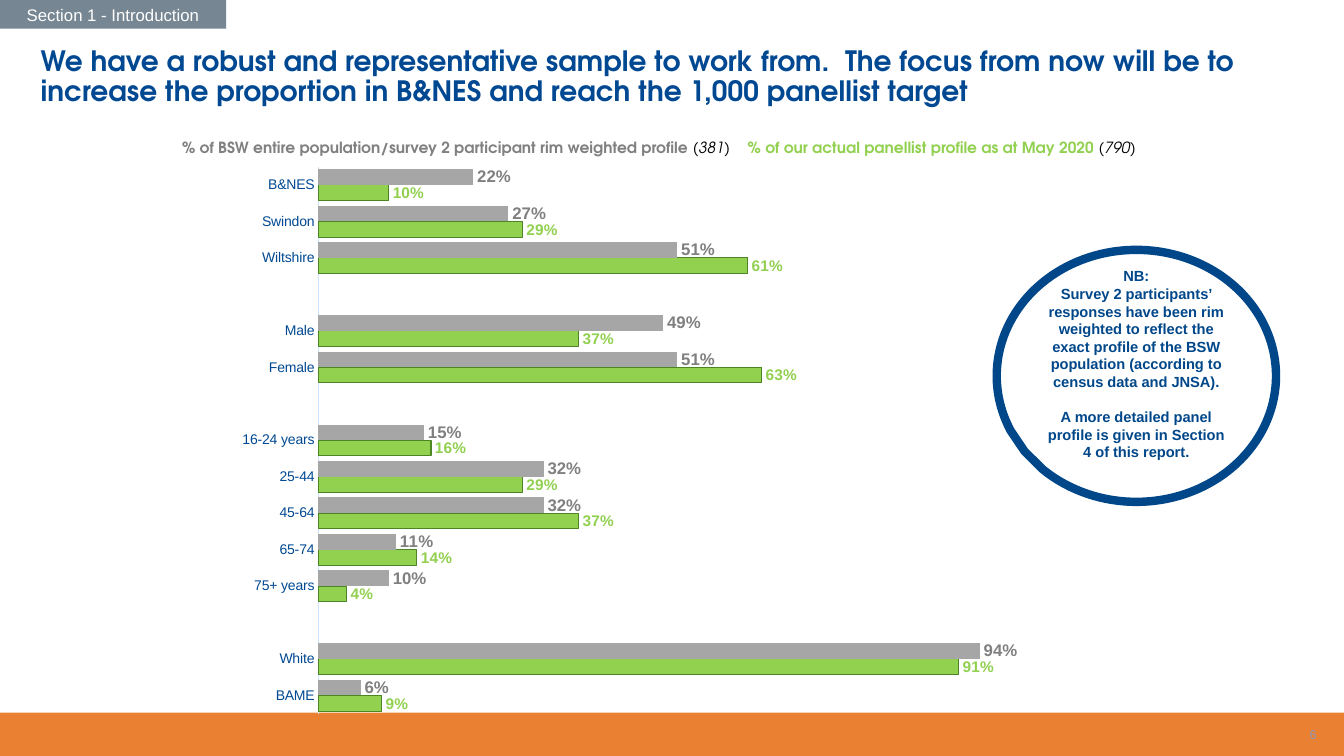
from dataclasses import dataclass

from lxml import etree
from pptx import Presentation
from pptx.chart.data import CategoryChartData
from pptx.dml.color import RGBColor
from pptx.enum.chart import XL_CHART_TYPE as ChartType
from pptx.enum.chart import XL_LABEL_POSITION as LabelPosition
from pptx.enum.chart import XL_TICK_MARK as TickMark
from pptx.enum.shapes import MSO_SHAPE as Shape
from pptx.enum.text import MSO_ANCHOR as Anchor
from pptx.enum.text import MSO_AUTO_SIZE as AutoSize
from pptx.enum.text import PP_ALIGN as Align
from pptx.oxml.ns import qn
from pptx.util import Pt


@dataclass(frozen=True)
class Theme:
    heading_font: str = "TeX Gyre Adventor"
    body_font: str = "Arial"
    navy: str = "004992"
    callout: str = "00478A"
    orange: str = "EA8132"
    slate: str = "768692"
    page_number: str = "8C95B6"
    green: str = "92D050"
    green_line: str = "4C8523"
    grey_bar: str = "A6A6A6"
    grey_text: str = "808080"
    axis: str = "C8E4FF"
    white: str = "FFFFFF"
    black: str = "000000"
    title_size: float = 20
    section_size: float = 12
    key_size: float = 11
    callout_size: float = 10.5
    axis_size: float = 10
    panel_label_size: float = 11
    population_label_size: float = 12
    page_size: float = 9


THEME = Theme()

# Top to bottom: category, population share, panel share; None is a gap between groups.
PROFILE = [
    ("B&NES", 0.22, 0.10),
    ("Swindon", 0.27, 0.29),
    ("Wiltshire", 0.51, 0.61),
    ("", None, None),
    ("Male", 0.49, 0.37),
    ("Female", 0.51, 0.63),
    ("", None, None),
    ("16-24 years", 0.15, 0.16),
    ("25-44", 0.32, 0.29),
    ("45-64", 0.32, 0.37),
    ("65-74", 0.11, 0.14),
    ("75+ years", 0.10, 0.04),
    ("", None, None),
    ("White", 0.94, 0.91),
    ("BAME", 0.06, 0.09),
]


def style_font(font, size, color, name=THEME.body_font, bold=False, italic=False):
    font.name, font.size, font.bold, font.italic = name, Pt(size), bold, italic
    font.color.rgb = RGBColor.from_string(color)


def set_margins(text_frame, left, top, right, bottom):
    text_frame.margin_left, text_frame.margin_top = Pt(left), Pt(top)
    text_frame.margin_right, text_frame.margin_bottom = Pt(right), Pt(bottom)


def add_block(slide, box, color, text=""):
    block = slide.shapes.add_shape(Shape.RECTANGLE, *map(Pt, box))
    block.shadow.inherit = False
    block.fill.solid()
    block.fill.fore_color.rgb = RGBColor.from_string(color)
    block.line.fill.background()
    if text:
        block.text_frame.text = text
        block.text_frame.vertical_anchor = Anchor.MIDDLE
        paragraph = block.text_frame.paragraphs[0]
        paragraph.alignment = Align.CENTER
        style_font(paragraph.runs[0].font, THEME.section_size, THEME.white)


def add_page_number(slide, box, number):
    text_frame = slide.shapes.add_textbox(*map(Pt, box)).text_frame
    text_frame.word_wrap = True
    text_frame.vertical_anchor = Anchor.MIDDLE
    text_frame.text = number
    paragraph = text_frame.paragraphs[0]
    paragraph.alignment = Align.RIGHT
    style_font(paragraph.runs[0].font, THEME.page_size, THEME.page_number)


def set_title(slide, box, text):
    title = slide.shapes.title
    title.left, title.top, title.width, title.height = map(Pt, box)
    text_frame = title.text_frame
    text_frame.text = text
    text_frame.auto_size = AutoSize.NONE
    text_frame.word_wrap = True
    text_frame.vertical_anchor = Anchor.TOP
    set_margins(text_frame, 17, 3.6, 17, 3.6)
    paragraph = text_frame.paragraphs[0]
    paragraph.alignment = Align.LEFT
    paragraph.line_spacing = 0.9
    style_font(paragraph.runs[0].font, THEME.title_size, THEME.navy, THEME.heading_font, bold=True)


def add_chart_key(slide, box, tab_position, entries):
    """Write the series names and sample sizes on one line, parted by a tab stop."""
    text_frame = slide.shapes.add_textbox(*map(Pt, box)).text_frame
    text_frame.word_wrap = True
    paragraph = text_frame.paragraphs[0]
    tabs = etree.SubElement(paragraph._p.get_or_add_pPr(), qn("a:tabLst"))
    etree.SubElement(tabs, qn("a:tab"), pos=str(Pt(tab_position)), algn="l")
    for index, (name, sample, color) in enumerate(entries):
        label = paragraph.add_run()
        label.text = ("\t" if index else "") + name + " "
        style_font(label.font, THEME.key_size, color, THEME.heading_font, bold=True)
        base = paragraph.add_run()
        base.text = sample
        style_font(base.font, THEME.key_size, THEME.black, THEME.heading_font, italic=True)


def style_series(series, fill, label_color, label_size):
    series.format.fill.solid()
    series.format.fill.fore_color.rgb = RGBColor.from_string(fill)
    series.invert_if_negative = False
    labels = series.data_labels
    labels.show_value = True
    labels.number_format, labels.number_format_is_linked = "0%", False
    labels.position = LabelPosition.OUTSIDE_END
    style_font(labels.font, label_size, label_color, bold=True)


def set_plot_area(chart, **fractions):
    """Fix the inner plot area as fractions of the chart frame."""
    plot_area = chart._chartSpace.chart.plotArea
    for old in plot_area.findall(qn("c:layout")):
        plot_area.remove(old)
    layout = etree.Element(qn("c:layout"))
    plot_area.insert(0, layout)
    manual = etree.SubElement(layout, qn("c:manualLayout"))
    settings = {"layoutTarget": "inner", "xMode": "edge", "yMode": "edge", **fractions}
    for tag, value in settings.items():
        etree.SubElement(manual, qn(f"c:{tag}"), val=str(value))


def add_profile_chart(slide, box):
    categories, population, panel = zip(*reversed(PROFILE))
    data = CategoryChartData(number_format="0%")
    data.categories = categories
    data.add_series("Series 1", panel)
    data.add_series("Series 2", population)
    chart = slide.shapes.add_chart(ChartType.BAR_CLUSTERED, *map(Pt, box), data).chart
    chart.has_legend = chart.has_title = False
    style_font(chart.font, THEME.axis_size, THEME.navy)
    plot = chart.plots[0]
    plot.gap_width, plot.overlap, plot.vary_by_categories = 33, 0, False

    axis = chart.category_axis
    axis.major_tick_mark = axis.minor_tick_mark = TickMark.NONE
    axis.format.line.color.rgb = RGBColor.from_string(THEME.axis)
    axis.format.line.width = Pt(0.75)
    style_font(axis.tick_labels.font, THEME.axis_size, THEME.navy)
    scale = chart.value_axis
    scale.minimum_scale, scale.maximum_scale = 0, 1
    scale.has_major_gridlines = scale.visible = False

    panel_bars, population_bars = plot.series
    style_series(panel_bars, THEME.green, THEME.green, THEME.panel_label_size)
    panel_bars.format.line.color.rgb = RGBColor.from_string(THEME.green_line)
    panel_bars.format.line.width = Pt(0.75)
    style_series(population_bars, THEME.grey_bar, THEME.grey_text, THEME.population_label_size)
    set_plot_area(chart, x=0.114, y=0.02, w=0.868, h=0.96)


def add_callout(slide, box, notes):
    callout = slide.shapes.add_shape(Shape.OVAL_CALLOUT, *map(Pt, box))
    callout.adjustments[0], callout.adjustments[1] = -0.4, 0.3
    callout.shadow.inherit = False
    callout.fill.background()
    callout.line.color.rgb = RGBColor.from_string(THEME.callout)
    callout.line.width = Pt(6)
    text_frame = callout.text_frame
    text_frame.word_wrap = True
    text_frame.vertical_anchor = Anchor.MIDDLE
    set_margins(text_frame, 7.2, 0, 7.2, 17)
    text_frame.text = "\n".join(notes)
    for paragraph in text_frame.paragraphs:
        paragraph.alignment = Align.CENTER
        style_font(paragraph.runs[0].font, THEME.callout_size, THEME.callout, bold=True)
    text_frame.paragraphs[-1].space_before = Pt(12.5)


def main():
    presentation = Presentation()
    presentation.slide_width, presentation.slide_height = Pt(960), Pt(540)
    slide = presentation.slides.add_slide(presentation.slide_layouts[5])
    add_block(slide, (0, 509, 960, 31), THEME.orange)
    add_page_number(slide, (731.5, 510, 216, 29), "6")
    add_block(slide, (0, 0, 161.5, 20.5), THEME.slate, "Section 1 - Introduction")
    add_profile_chart(slide, (161.5, 111, 579, 407))
    set_title(slide, (12, 30, 924.5, 81),
              "We have a robust and representative sample to work from.  The focus from now "
              "will be to increase the proportion in B&NES and reach the 1,000 panellist target")
    add_callout(slide, (712, 178.5, 199.5, 180), [
        "NB:",
        "Survey 2 participants’ responses have been rim weighted to reflect the exact "
        "profile of the BSW population (according to census data and JNSA).",
        "A more detailed panel profile is given in Section 4 of this report."])
    add_chart_key(slide, (123, 95, 730, 31.5), 404, [
        ("% of BSW entire population/survey 2 participant rim weighted profile", "(381)",
         THEME.grey_text),
        ("% of our actual panellist profile as at May 2020", "(790)", THEME.green)])
    presentation.save("out.pptx")


if __name__ == "__main__":
    main()
